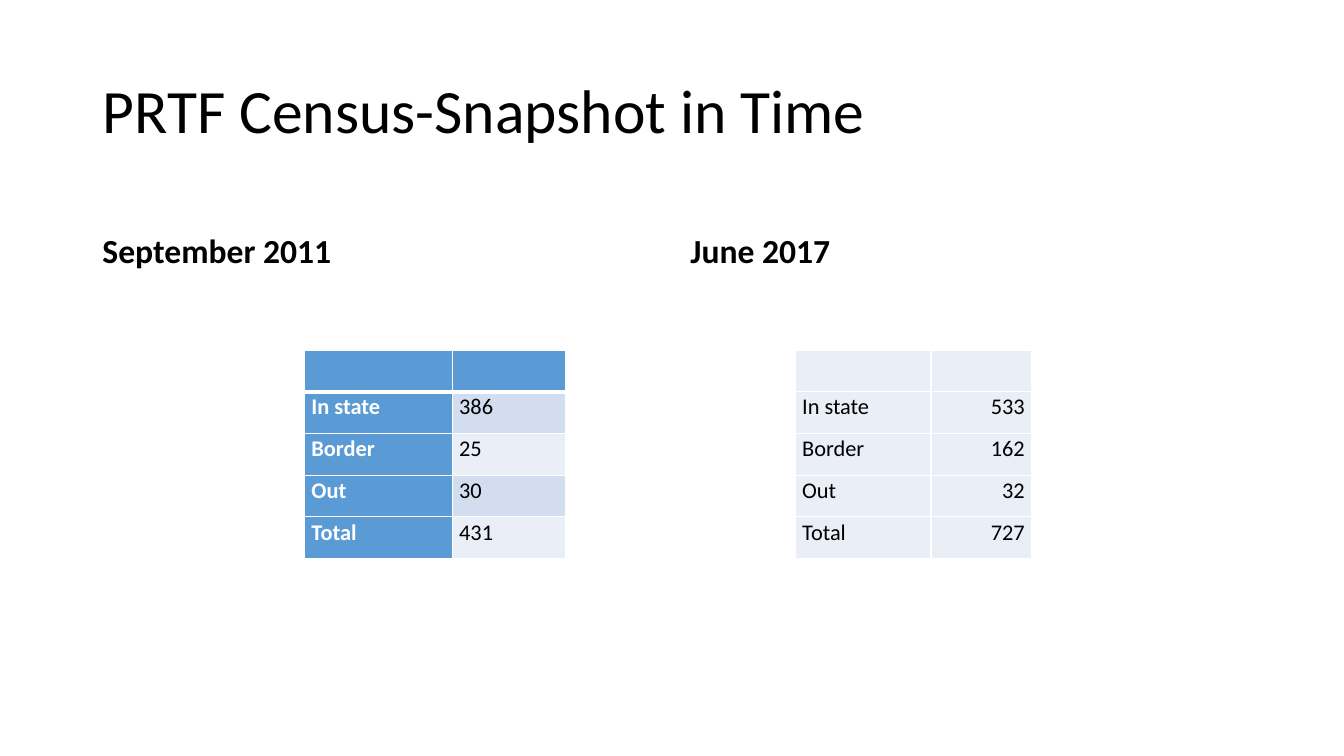
"""Build the census slide with two headed tables."""
from dataclasses import dataclass

from lxml.etree import SubElement as Sub
from pptx import Presentation as Deck
from pptx.dml.color import RGBColor as Color
from pptx.enum.text import MSO_ANCHOR as Anchor, MSO_AUTO_SIZE as Fit, PP_ALIGN as Align
from pptx.oxml.ns import qn
from pptx.util import Pt


@dataclass(frozen=True)
class Theme:
    face: str = "Calibri"
    ink: str = "000000"
    white: str = "FFFFFF"
    blue: str = "5B9BD5"
    band: str = "D2DEEF"
    pale: str = "EAEFF7"
    title: int = 44
    head: int = 24
    cell: int = 16


class Page:
    def __init__(self, deck, theme):
        self.theme = theme
        self.slide = deck.slides.add_slide(deck.slide_layouts[4])
        self.slots = {s.placeholder_format.idx: s for s in self.slide.placeholders}

    def style(self, para, size, color, bold=False):
        font = para.font
        font.name, font.size, font.bold = self.theme.face, Pt(size), bold
        font.color.rgb = Color.from_string(color)

    def text(self, slot, words, box, size, anchor, bold=False, gap=0):
        shape = self.slots.pop(slot)
        shape.left, shape.top, shape.width, shape.height = map(Pt, box)
        frame = shape.text_frame
        frame.text = words
        frame.word_wrap, frame.auto_size = True, Fit.NONE
        frame.vertical_anchor = anchor
        para = frame.paragraphs[0]
        para.alignment, para.line_spacing = Align.LEFT, 0.9
        para.space_before = Pt(gap)
        self.style(para, size, self.theme.ink, bold)

    def edge(self, cell, top, bottom):
        props = cell._tc.get_or_add_tcPr()
        for side, width in zip("LRTB", (1, 1, top, bottom)):
            line = Sub(props, qn(f"a:ln{side}"), w=str(Pt(width)))
            fill = Sub(line, qn("a:solidFill"))
            Sub(fill, qn("a:srgbClr"), val=self.theme.white)

    def cell(self, cell, words, fill, color, bold, align):
        cell.fill.solid()
        cell.fill.fore_color.rgb = Color.from_string(fill)
        cell.margin_left = cell.margin_right = Pt(5)
        cell.margin_top = cell.margin_bottom = 0
        cell.text = words
        para = cell.text_frame.paragraphs[0]
        para.alignment, para.line_spacing = align, 1.07
        self.style(para, self.theme.cell, color, bold)

    def table(self, left, top, widths, high, data, align, accent):
        theme = self.theme
        rows = [("", ""), *data]
        frame = self.slide.shapes.add_table(
            len(rows), len(widths), Pt(left), Pt(top), Pt(sum(widths)), Pt(high * len(rows)))
        table = frame.table
        table.first_row = table.horz_banding = False
        for col, width in zip(table.columns, widths):
            col.width = Pt(width)
        for r, row in enumerate(rows):
            table.rows[r].height = Pt(high)
            for c, words in enumerate(row):
                strong = accent and (r == 0 or c == 0)
                fill = theme.blue if strong else theme.band if accent and r % 2 else theme.pale
                color = theme.white if strong else theme.ink
                cell = table.cell(r, c)
                self.edge(cell, 3 if accent and r == 1 else 1, 3 if accent and r == 0 else 1)
                self.cell(cell, words, fill, color, strong, align if c else Align.LEFT)

    def clean(self):
        for shape in self.slots.values():
            shape._element.getparent().remove(shape._element)


def main():
    deck = Deck()
    deck.slide_width, deck.slide_height = Pt(960), Pt(540)
    theme = Theme()
    page = Page(deck, theme)
    page.text(0, "PRTF Census-Snapshot in Time", (66, 28.8, 828, 104.4),
              theme.title, Anchor.MIDDLE)
    names = "In state", "Border", "Out", "Total"
    groups = (
        (1, "September 2011", 66, 406, 217.5, (105.5, 81),
         ("386", "25", "30", "431"), Align.LEFT, True),
        (3, "June 2017", 486, 408, 568, (97, 72),
         ("533", "162", "32", "727"), Align.RIGHT, False),
    )
    for slot, head, x, wide, left, widths, counts, align, accent in groups:
        page.text(slot, head, (x, 132.4, wide, 64.8), theme.head, Anchor.BOTTOM, True, 10)
        page.table(left, 250, widths, 29.8, zip(names, counts), align, accent)
    page.clean()
    deck.save("out.pptx")


if __name__ == "__main__":
    main()
